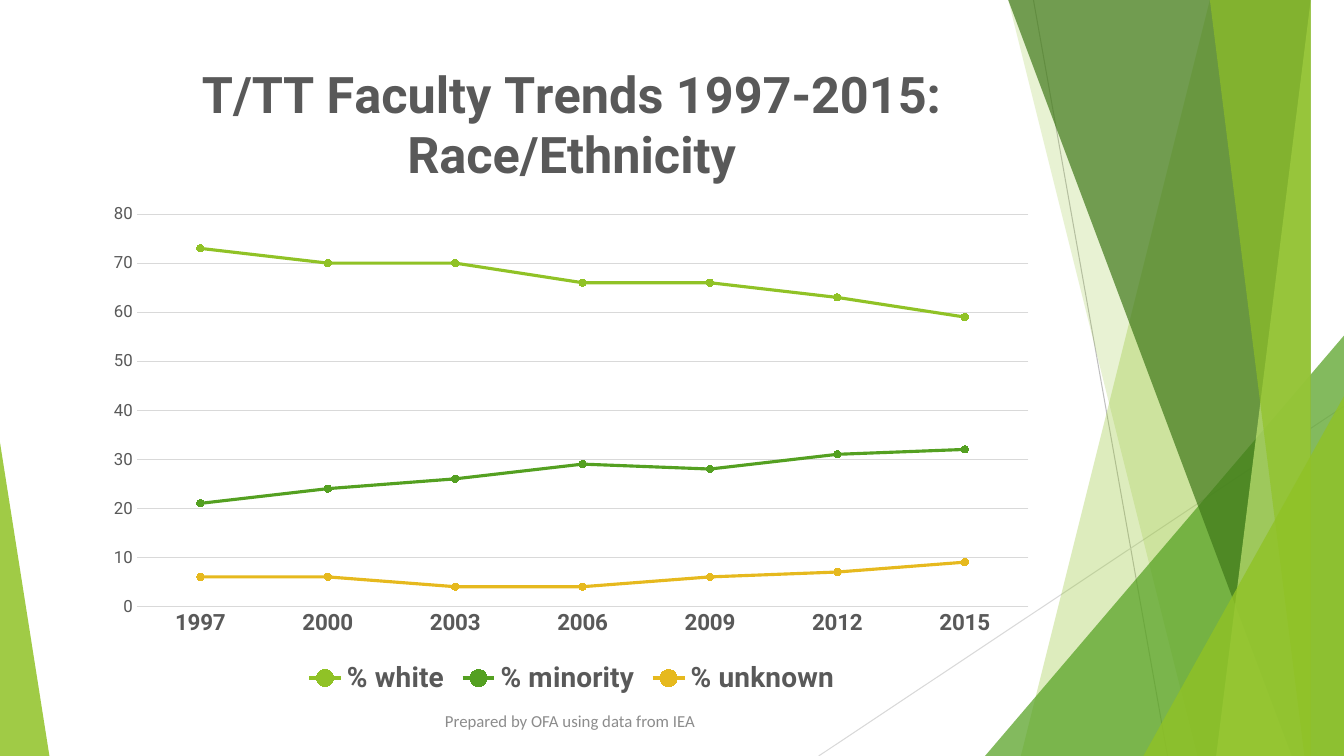
import pptx
import pptx.chart.data
import pptx.dml.color
import pptx.enum.chart
import pptx.enum.shapes
import pptx.enum.text
import pptx.oxml
import pptx.oxml.ns
import pptx.util
from pptx.util import Inches

RGBColor = pptx.dml.color.RGBColor
LIME = RGBColor(0x90, 0xC2, 0x26)
GREEN = RGBColor(0x54, 0xA0, 0x21)
DARK_GREEN = RGBColor(0x3F, 0x78, 0x19)
PALE_LIME = RGBColor(0xC0, 0xE4, 0x74)
GOLD = RGBColor(0xE6, 0xB9, 0x1E)
TEXT_GRAY = RGBColor(0x59, 0x59, 0x59)
FOOTER_GRAY = RGBColor(0x8C, 0x8C, 0x8C)
MID_GRAY = RGBColor(0xBF, 0xBF, 0xBF)
LIGHT_GRAY = RGBColor(0xD9, 0xD9, 0xD9)
WIDTH, HEIGHT = 13.33, 7.5


class SlideBuilder:
    heading_font = "Roboto"
    body_font = "Calibri"

    def __init__(self, slide):
        self.slide = slide

    def set_font(self, font, size, color=TEXT_GRAY, bold=False, name=None):
        font.name = name or self.heading_font
        font.size = pptx.util.Pt(size)
        font.bold = bold
        font.color.rgb = color

    def set_line(self, line, color, width=0.75):
        line.color.rgb = color
        line.width = pptx.util.Pt(width)

    def line(self, x1, y1, x2, y2, color):
        cn = self.slide.shapes.add_connector(
            pptx.enum.shapes.MSO_CONNECTOR.STRAIGHT,
            Inches(x1), Inches(y1), Inches(x2), Inches(y2))
        self.set_line(cn.line, color)
        cn._element.spPr.append(pptx.oxml.parse_xml(
            "<a:effectLst %s/>" % pptx.oxml.ns.nsdecls("a")))

    def paint(self, sp, color, opacity):
        sp.shadow.inherit = False
        sp.line.fill.background()
        sp.fill.solid()
        sp.fill.fore_color.rgb = color
        clr = sp._element.spPr.find(".//" + pptx.oxml.ns.qn("a:srgbClr"))
        clr.append(pptx.oxml.parse_xml('<a:alpha %s val="%d"/>' % (
            pptx.oxml.ns.nsdecls("a"), opacity * 1000)))

    def band(self, top_x, bottom_x, color, opacity):
        """Fill from a slanted left edge to the right side of the slide."""
        fb = self.slide.shapes.build_freeform(top_x, 0, scale=Inches(1))
        fb.add_line_segments(
            [(WIDTH, 0), (WIDTH, HEIGHT), (bottom_x, HEIGHT)], close=True)
        self.paint(fb.convert_to_shape(), color, opacity)

    def triangle(self, x, y, w, apex, color, opacity):
        """Triangle standing on the bottom edge of the slide."""
        sp = self.slide.shapes.add_shape(
            pptx.enum.shapes.MSO_SHAPE.ISOSCELES_TRIANGLE,
            Inches(x), Inches(y), Inches(w), Inches(HEIGHT - y))
        sp.adjustments[0] = apex
        self.paint(sp, color, opacity)

    def text(self, x, y, w, h, text, size, color):
        tf = self.slide.shapes.add_textbox(
            Inches(x), Inches(y), Inches(w), Inches(h)).text_frame
        tf.word_wrap = True
        tf.vertical_anchor = pptx.enum.text.MSO_ANCHOR.MIDDLE
        tf.text = text
        p = tf.paragraphs[0]
        p.alignment = pptx.enum.text.PP_ALIGN.CENTER
        self.set_font(p.runs[0].font, size, color, name=self.body_font)

    def line_chart(self, x, y, w, h, title_lines, categories, series, plot):
        data = pptx.chart.data.CategoryChartData()
        data.categories = categories
        for name, values, _ in series:
            data.add_series(name, values)
        chart = self.slide.shapes.add_chart(
            pptx.enum.chart.XL_CHART_TYPE.LINE_MARKERS,
            Inches(x), Inches(y), Inches(w), Inches(h), data).chart
        self.set_font(chart.font, 10)

        # Title
        tf = chart.chart_title.text_frame
        tf.text = "\n".join(title_lines)
        for p in tf.paragraphs:
            self.set_font(p.runs[0].font, 36, bold=True)
        chart.chart_title.include_in_layout = False

        # Legend
        chart.has_legend = True
        chart.legend.position = pptx.enum.chart.XL_LEGEND_POSITION.BOTTOM
        chart.legend.include_in_layout = False
        self.set_font(chart.legend.font, 20, bold=True)

        # Axes
        for axis, size, bold in ((chart.category_axis, 16, True),
                                 (chart.value_axis, 12, False)):
            axis.major_tick_mark = pptx.enum.chart.XL_TICK_MARK.NONE
            axis.minor_tick_mark = pptx.enum.chart.XL_TICK_MARK.NONE
            self.set_font(axis.tick_labels.font, size, bold=bold)
        self.set_line(chart.category_axis.format.line, LIGHT_GRAY)
        axis = chart.value_axis
        axis.minimum_scale, axis.maximum_scale, axis.major_unit = 0, 80, 10
        axis.format.line.fill.background()
        self.set_line(axis.major_gridlines.format.line, LIGHT_GRAY)

        # Series
        chart.plots[0].vary_by_categories = False
        for ser, (_, _, color) in zip(chart.plots[0].series, series):
            ser.smooth = False
            self.set_line(ser.format.line, color, 2.25)
            ser.marker.style = pptx.enum.chart.XL_MARKER_STYLE.CIRCLE
            ser.marker.size = 5
            ser.marker.format.fill.solid()
            ser.marker.format.fill.fore_color.rgb = color
            self.set_line(ser.marker.format.line, color)

        # Plot area position, as fractions of the chart
        area = chart._chartSpace.chart.plotArea
        for old in area.findall(pptx.oxml.ns.qn("c:layout")):
            area.remove(old)
        sizes = "".join('<c:%s val="%s"/>' % pair
                        for pair in zip("xywh", plot))
        area.insert(0, pptx.oxml.parse_xml(
            '<c:layout %s><c:manualLayout><c:layoutTarget val="inner"/>'
            '<c:xMode val="edge"/><c:yMode val="edge"/>%s'
            '</c:manualLayout></c:layout>'
            % (pptx.oxml.ns.nsdecls("c"), sizes)))


def main():
    prs = pptx.Presentation()
    prs.slide_width, prs.slide_height = Inches(WIDTH), Inches(HEIGHT)
    s = SlideBuilder(prs.slides.add_slide(prs.slide_layouts[6]))

    # Decorative lines and facets
    s.line(10.25, 0, 11.58, HEIGHT, MID_GRAY)
    s.line(WIDTH, 4.03, 8.12, HEIGHT, LIGHT_GRAY)
    s.band(12.28, 10.04, LIME, 30)
    s.band(10.5, 11.83, LIME, 20)
    s.triangle(9.77, 3.33, 3.56, 1, GREEN, 72)
    s.band(10.21, 12.91, DARK_GREEN, 70)
    s.band(13.03, 11.92, PALE_LIME, 70)
    s.band(11.96, 13.18, LIME, 65)
    s.triangle(11.34, 3.93, 1.99, 1, LIME, 80)
    s.triangle(0, 4.39, 0.49, 0, LIME, 85)

    # Faculty trend chart
    s.line_chart(
        0.94, 0.42, 9.46, 6.53,
        ["T/TT Faculty Trends 1997-2015:", "Race/Ethnicity"],
        [str(year) for year in range(1997, 2016, 3)],
        [("% white", (73, 70, 70, 66, 66, 63, 59), LIME),
         ("% minority", (21, 24, 26, 29, 28, 31, 32), GREEN),
         ("% unknown", (6, 6, 4, 4, 6, 7, 9), GOLD)],
        plot=(0.044, 0.261, 0.935, 0.596))

    # Source note
    s.text(4.07, 6.95, 3.17, 0.4, "Prepared by OFA using data from IEA",
           12, FOOTER_GRAY)

    prs.save("out.pptx")


if __name__ == "__main__":
    main()
